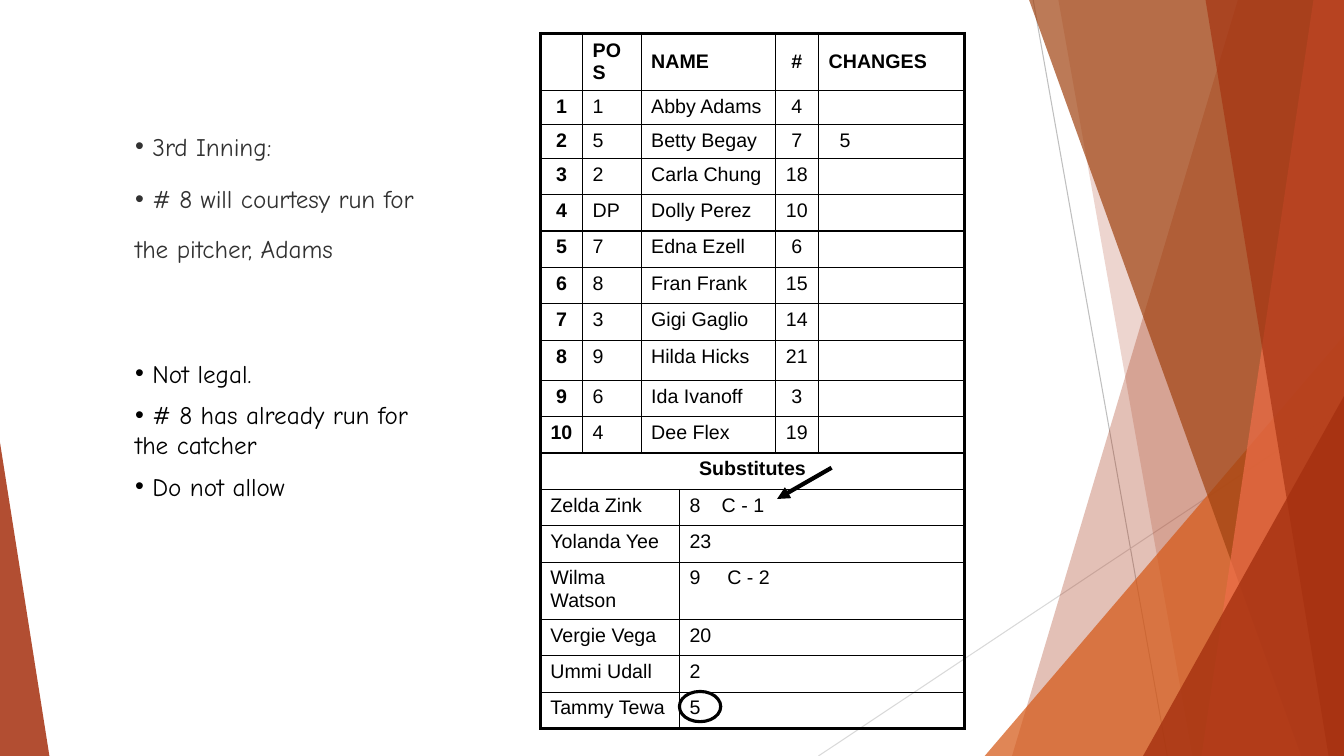
from lxml import etree
from pptx import Presentation
from pptx.dml.color import RGBColor
from pptx.enum.shapes import MSO_CONNECTOR, MSO_SHAPE
from pptx.enum.text import MSO_ANCHOR, MSO_AUTO_SIZE, PP_ALIGN
from pptx.oxml.ns import qn
from pptx.util import Pt

STRAIGHT = MSO_CONNECTOR.STRAIGHT
TRIANGLE, OVAL = MSO_SHAPE.ISOSCELES_TRIANGLE, MSO_SHAPE.OVAL
TOP, MIDDLE = MSO_ANCHOR.TOP, MSO_ANCHOR.MIDDLE
CENTER, LEFT = PP_ALIGN.CENTER, PP_ALIGN.LEFT
GROW = MSO_AUTO_SIZE.SHAPE_TO_FIT_TEXT

WIDTH, HEIGHT = 960, 540
BLACK = "000000"
THIN, THICK = 1, 2.25

# Bands run from the slide's top edge to its bottom: top x, bottom x, colour, opacity
BACK_BANDS = [(884.2, 722.9, "A5300F", 30), (756, 851.8, "A5300F", 20)]
FRONT_BANDS = [(735.1, 929.5, "A04210", 70), (938.2, 858.2, "EE6E4A", 70),
               (861.1, 949, "A5300F", 65)]

COLUMNS = [30.2, 41.8, 27.4, 68.4, 31, 104.4]
ROWS = [40.4] + [24.2] * 2 + [26] * 5 + [28.6] + [26] * 5 + [40.4] + [26] * 3
HEADINGS = ["", "POS", "NAME", "#", "CHANGES"]
# Position, name, number, changes
LINEUP = [
    ("1", "Abby Adams", "4", ""), ("5", "Betty Begay", "7", "5"),
    ("2", "Carla Chung", "18", ""), ("DP", "Dolly Perez", "10", ""),
    ("7", "Edna Ezell", "6", ""), ("8", "Fran Frank", "15", ""),
    ("3", "Gigi Gaglio", "14", ""), ("9", "Hilda Hicks", "21", ""),
    ("6", "Ida Ivanoff", "3", ""), ("4", "Dee Flex", "19", ""),
]
# Name, number, courtesy run and its tab stop
SUBSTITUTES = [
    ("Zelda Zink", "8\tC - 1", 23), ("Yolanda Yee", "23", 0),
    ("Wilma Watson", "9\tC - 2", 27), ("Vergie Vega", "20", 0),
    ("Ummi Udall", "2", 0), ("Tammy Tewa", "5", 0),
]


def rgb(colour):
    return RGBColor.from_string(colour)


def set_font(font, name, size, colour, bold=False):
    font.name, font.size, font.bold = name, Pt(size), bold
    font.color.rgb = rgb(colour)


def paint(shape, colour, opacity):
    shape.shadow.inherit = False
    shape.line.fill.background()
    shape.fill.solid()
    shape.fill.fore_color.rgb = rgb(colour)
    tint = shape.fill._xPr.find(qn("a:solidFill"))[0]
    etree.SubElement(tint, qn("a:alpha"), val=str(opacity * 1000))


def add_band(slide, top_x, bottom_x, colour, opacity):
    builder = slide.shapes.build_freeform(Pt(top_x), Pt(0))
    corners = [(WIDTH, 0), (WIDTH, HEIGHT), (bottom_x, HEIGHT)]
    builder.add_line_segments([(Pt(x), Pt(y)) for x, y in corners], close=True)
    paint(builder.convert_to_shape(), colour, opacity)


def add_corner(slide, left, top, width, apex, colour, opacity):
    shape = slide.shapes.add_shape(TRIANGLE, Pt(left), Pt(top), Pt(width), Pt(HEIGHT - top))
    shape.adjustments[0] = apex
    paint(shape, colour, opacity)


def add_line(slide, start, end, colour, width, arrow=False):
    line = slide.shapes.add_connector(STRAIGHT, *[Pt(v) for v in start + end])
    line.line.color.rgb = rgb(colour)
    line.line.width = Pt(width)
    if arrow:
        etree.SubElement(line.line._get_or_add_ln(), qn("a:tailEnd"), type="triangle")
    etree.SubElement(line._element.spPr, qn("a:effectLst"))


def add_list(box, frame, items, colour):
    box.left, box.top, box.width, box.height = [Pt(v) for v in frame]
    text = box.text_frame
    text.word_wrap = True
    text.auto_size = GROW
    for index, item in enumerate(items):
        para = text.paragraphs[0] if index == 0 else text.add_paragraph()
        para.add_run().text = " " + item
        para.space_before = Pt(8)
        set_font(para.font, "Comic Neue", 18, colour)
        properties = para._p.get_or_add_pPr()
        properties.set("marL", "0")
        properties.set("indent", "0")
    return text.paragraphs


def set_border(cell, side, width):
    line = etree.SubElement(cell._tc.get_or_add_tcPr(), qn("a:" + side), w=str(Pt(width)))
    fill = etree.SubElement(line, qn("a:solidFill"))
    etree.SubElement(fill, qn("a:srgbClr"), val=BLACK)


def fill_cell(table, row, column, text, span=1, bold=False, align=LEFT, anchor=TOP):
    cell = table.cell(row, column)
    last = column + span - 1
    if span > 1:
        cell.merge(table.cell(row, last))
    edges = {"lnL": column == 0, "lnR": last == len(COLUMNS) - 1,
             "lnT": row == 0, "lnB": row == len(ROWS) - 1}
    for side, outer in edges.items():
        set_border(cell, side, THICK if outer else THIN)
    cell.fill.background()
    cell.vertical_anchor = anchor
    para = cell.text_frame.paragraphs[0]
    if text:
        para.add_run().text = text
    para.alignment = align
    para.space_before = Pt(2.8)
    set_font(para.font, "Arial", 14, BLACK, bold)
    return cell


def add_tab_stop(cell, position):
    properties = cell.text_frame.paragraphs[0]._p.get_or_add_pPr()
    stops = etree.Element(qn("a:tabLst"))
    etree.SubElement(stops, qn("a:tab"), pos=str(Pt(position)), algn="l")
    properties.find(qn("a:defRPr")).addprevious(stops)


def add_lineup_card(slide):
    frame = slide.shapes.add_table(len(ROWS), len(COLUMNS), Pt(386), Pt(23.8),
                                   Pt(sum(COLUMNS)), Pt(sum(ROWS)))
    table = frame.table
    table.first_row = table.horz_banding = False
    for column, width in zip(table.columns, COLUMNS):
        column.width = Pt(width)
    for row, height in zip(table.rows, ROWS):
        row.height = Pt(height)

    # Headings and batting order; the name spans two columns
    players = [(str(order), *player) for order, player in enumerate(LINEUP, 1)]
    for row, values in enumerate([HEADINGS] + players):
        for column, span, text in zip((0, 1, 2, 4, 5), (1, 1, 2, 1, 1), values):
            cell = fill_cell(table, row, column, text, span,
                             bold=row == 0 or column == 0,
                             align=CENTER if column in (0, 4) else LEFT,
                             anchor=MIDDLE if row == 0 else TOP)
            if row and column == 5 and text:
                cell.margin_left = Pt(15)

    # Substitutes
    first = len(LINEUP) + 1
    fill_cell(table, first, 0, "Substitutes", 6, bold=True, align=CENTER)
    for row, (name, number, stop) in enumerate(SUBSTITUTES, first + 1):
        fill_cell(table, row, 0, name, 3)
        cell = fill_cell(table, row, 3, number, 3)
        if stop:
            add_tab_stop(cell, stop)


def add_backdrop(slide):
    add_line(slide, (738, 0), (833.8, HEIGHT), "BFBFBF", 0.75)
    add_line(slide, (WIDTH, 290.2), (584.6, HEIGHT), "D9D9D9", 0.75)
    for band in BACK_BANDS:
        add_band(slide, *band)
    add_corner(slide, 703.4, 239.8, 256.6, 1, "D55816", 72)
    for band in FRONT_BANDS:
        add_band(slide, *band)
    add_corner(slide, 816.5, 283, 143.5, 1, "A5300F", 80)
    add_corner(slide, 0, 316.1, 35.3, 0, "A5300F", 85)


def main():
    deck = Presentation()
    deck.slide_width, deck.slide_height = Pt(WIDTH), Pt(HEIGHT)
    slide = deck.slides.add_slide(deck.slide_layouts[3])
    title, situation, ruling = slide.placeholders
    title._element.getparent().remove(title._element)
    add_backdrop(slide)

    # Situation and ruling
    paras = add_list(situation, (89.3, 90, 236.9, 100.8),
                     ["3rd Inning:", "# 8 will courtesy run for the pitcher, Adams"], "323232")
    paras[1].space_before = Pt(16)
    span = paras[1].add_run()
    span.text = " "
    span.font.size = Pt(32)
    add_list(ruling, (89.3, 252, 219.6, 116.6),
             ["Not legal.", "# 8 has already run for the catcher", "Do not allow"], BLACK)

    # Lineup card with its marks
    add_lineup_card(slide)
    ring = slide.shapes.add_shape(OVAL, Pt(485.3), Pt(493.9), Pt(29.5), Pt(21.6))
    ring.shadow.inherit = False
    ring.fill.background()
    ring.line.color.rgb = rgb(BLACK)
    ring.line.width = Pt(THICK)
    add_line(slide, (594, 334.1), (555.1, 356.4), BLACK, 3, arrow=True)
    deck.save("out.pptx")


if __name__ == "__main__":
    main()
